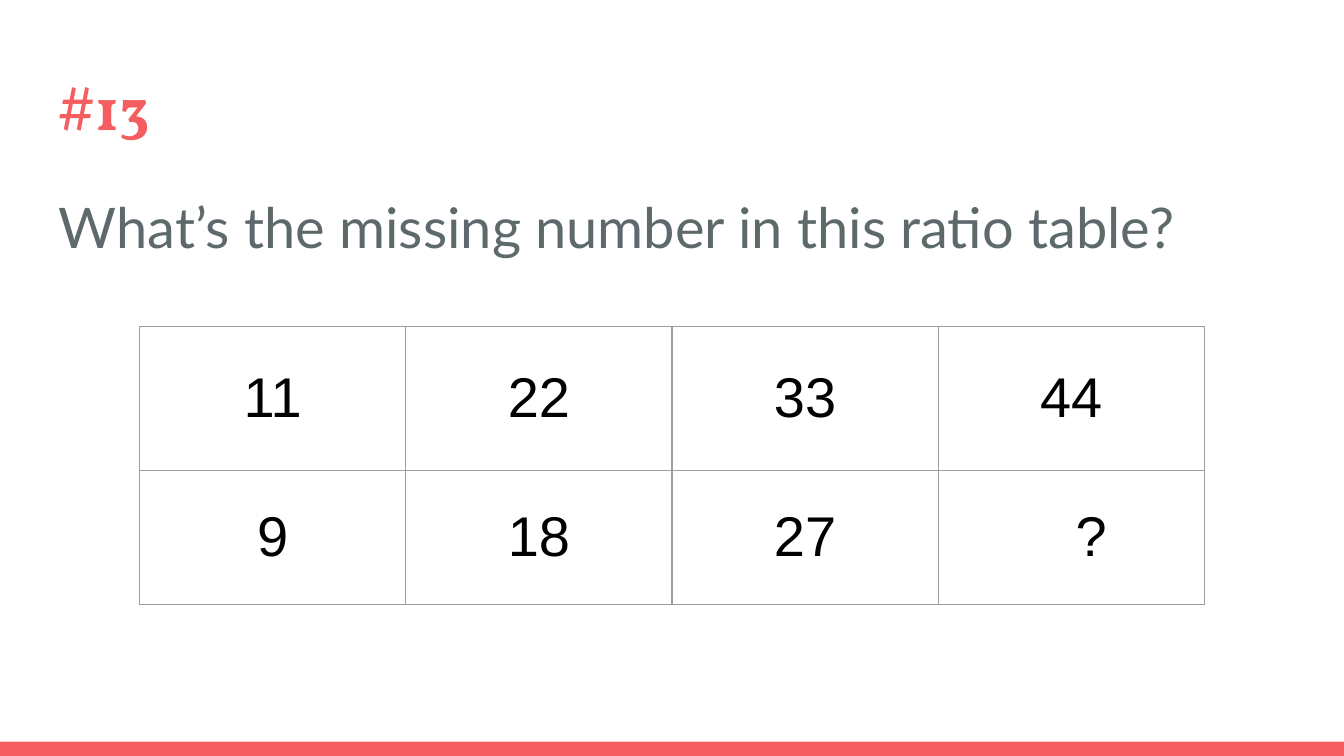
import pptx
import pptx.util
import pptx.dml.color
import pptx.enum.shapes
import pptx.enum.text
import pptx.oxml
import pptx.oxml.ns

Cm, Pt = pptx.util.Cm, pptx.util.Pt
ALIGN = pptx.enum.text.PP_ALIGN

# Content
TITLE = "#13"
ASK = "What’s the missing number in this ratio table?"
ROWS = [("11", "22", "33", "44"),
        ("9", "18", "27", "?")]
COLORS = {"coral": "F55E61", "slate": "5E696C", "black": "000000",
          "white": "FFFFFF", "line": "9E9E9E"}

# Layout in centimetres
WIDE, HIGH = 25.4, 14.29
BAR = 0.27
LEFT, SPAN = 0.86, 23.67
PAD = 0.25
COL, TALL = 5.03, (2.72, 2.54)
SHIFT = 2.35  # extra left margin of the unknown


def paint(fill, name):
    fill.solid()
    fill.fore_color.rgb = pptx.dml.color.RGBColor.from_string(COLORS[name])


def style(frame, font, size, color, bold=False):
    for run in frame.paragraphs[0].runs:
        run.font.name = font
        run.font.size = Pt(size)
        run.font.bold = bold
        paint(run.font.fill, color)


def pad(part):
    part.margin_left = part.margin_right = Cm(PAD)
    part.margin_top = part.margin_bottom = Cm(PAD)


def write(slide, text, top, high, font, size, color, bold=False, space=1.0):
    box = slide.shapes.add_textbox(Cm(LEFT), Cm(top), Cm(SPAN), Cm(high))
    frame = box.text_frame
    frame.word_wrap = True
    frame.vertical_anchor = pptx.enum.text.MSO_ANCHOR.TOP
    pad(frame)
    frame.text = text
    frame.paragraphs[0].line_spacing = space
    style(frame, font, size, color, bold)


def border(cell):
    props = cell._tc.get_or_add_tcPr()
    for spot, side in enumerate(("lnL", "lnR", "lnT", "lnB")):
        line = pptx.oxml.parse_xml(
            f'<a:{side} {pptx.oxml.ns.nsdecls("a")} w="{Pt(0.75)}">'
            f'<a:solidFill><a:srgbClr val="{COLORS["line"]}"/></a:solidFill>'
            f'</a:{side}>')
        props.insert(spot, line)


deck = pptx.Presentation()
deck.slide_width, deck.slide_height = Cm(WIDE), Cm(HIGH)
slide = deck.slides.add_slide(deck.slide_layouts[6])
paint(slide.background.fill, "white")

# Bottom bar
bar = slide.shapes.add_shape(pptx.enum.shapes.MSO_SHAPE.RECTANGLE,
                             0, Cm(HIGH - BAR), Cm(WIDE), Cm(BAR))
bar.shadow.inherit = False
paint(bar.fill, "coral")
bar.line.fill.background()

# Number and question
write(slide, TITLE, 1.09, 1.73, "Vollkorn", 32, "coral", bold=True)
write(slide, ASK, 3.2, 9.5, "Lato", 30, "slate", space=1.15)

# Ratio table, centred across the slide
count = len(ROWS[0])
width = COL * count
grid = slide.shapes.add_table(len(ROWS), count, Cm((WIDE - width) / 2),
                              Cm(6.17), Cm(width), Cm(sum(TALL))).table
grid.first_row = grid.horz_banding = False
for col in grid.columns:
    col.width = Cm(COL)
for r, row in enumerate(ROWS):
    grid.rows[r].height = Cm(TALL[r])
    for c, text in enumerate(row):
        cell = grid.cell(r, c)
        cell.text_frame.text = text
        style(cell.text_frame, "Arial", 30, "black")
        pad(cell)
        cell.vertical_anchor = pptx.enum.text.MSO_ANCHOR.MIDDLE
        cell.text_frame.paragraphs[0].alignment = ALIGN.CENTER
        if text == "?":
            cell.text_frame.paragraphs[0].alignment = ALIGN.LEFT
            cell.margin_left = Cm(PAD + SHIFT)
        cell.fill.background()
        border(cell)

deck.save("out.pptx")
